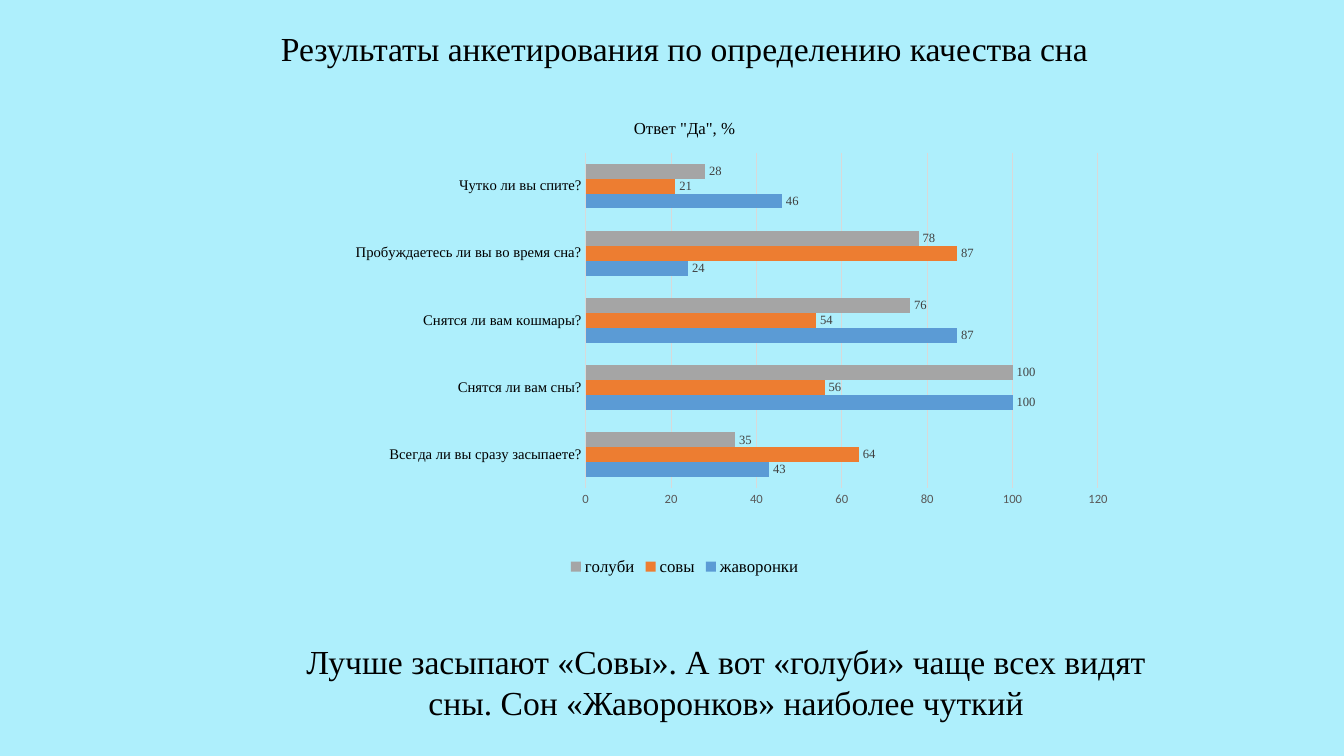
from lxml import etree
from pptx import Presentation, util as u
from pptx.chart.data import CategoryChartData
from pptx.dml.color import RGBColor
from pptx.enum import chart as ch, text
from pptx.oxml.ns import qn

PX = 9525  # EMU in one px, 96 px to the inch
SERIF, SANS = "Times New Roman", "Calibri"
COLORS = {
    "background": "AEEFFC", "text": "000000", "axis": "595959",
    "value": "404040", "grid": "D9D9D9",
    "жаворонки": "5B9BD5", "совы": "ED7D31", "голуби": "A5A5A5",
}
QUESTIONS = [
    "Всегда ли вы сразу засыпаете?", "Снятся ли вам сны?",
    "Снятся ли вам кошмары?", "Пробуждаетесь ли вы во время сна?",
    "Чутко ли вы спите?",
]
YES_ANSWERS = {
    "жаворонки": [43, 100, 87, 24, 46],
    "совы": [64, 56, 54, 87, 21],
    "голуби": [35, 100, 76, 78, 28],
}


def color(name):
    return RGBColor.from_string(COLORS[name])


def emu(box):
    return [length * PX for length in box]


def set_font(font, size, name=SERIF, ink="text"):
    font.size, font.name, font.bold = u.Pt(size), name, False
    font.color.rgb = color(ink)


def write(frame, words, wrap):
    frame.word_wrap = wrap
    frame.auto_size = text.MSO_AUTO_SIZE.SHAPE_TO_FIT_TEXT
    frame.vertical_anchor = text.MSO_ANCHOR.TOP
    line = frame.paragraphs[0]
    line.text = words
    line.alignment = text.PP_ALIGN.CENTER
    set_font(line.font, 24)


def add_heading(slide, box):
    heading = slide.shapes.title
    heading.left, heading.top, heading.width, heading.height = emu(box)
    write(heading.text_frame, "Результаты анкетирования по определению качества сна", False)


def add_conclusion(slide, box):
    conclusion = slide.shapes.add_textbox(*emu(box))
    write(conclusion.text_frame,
          "Лучше засыпают «Совы». А вот «голуби» чаще всех видят сны. "
          "Сон «Жаворонков» наиболее чуткий", True)


def set_plot_area(chart, x, y, w, h):
    """Fix the inner plot area, in fractions of the chart."""
    plot_area = chart._chartSpace.chart.plotArea
    for old in plot_area.findall(qn("c:layout")):
        plot_area.remove(old)
    layout = etree.Element(qn("c:layout"))
    manual = etree.SubElement(layout, qn("c:manualLayout"))
    settings = {"layoutTarget": "inner", "xMode": "edge", "yMode": "edge",
                "x": x, "y": y, "w": w, "h": h}
    for tag, value in settings.items():
        etree.SubElement(manual, qn(f"c:{tag}")).set("val", str(value))
    plot_area.insert(0, layout)


def add_survey_chart(slide, box):
    survey = CategoryChartData(number_format="General")
    survey.categories = QUESTIONS
    for group, answers in YES_ANSWERS.items():
        survey.add_series(group, answers)
    chart = slide.shapes.add_chart(
        ch.XL_CHART_TYPE.BAR_CLUSTERED, *emu(box), survey).chart
    set_font(chart.font, 10, SANS)
    set_plot_area(chart, 0.39, 0.11, 0.57, 0.7)

    # Chart title and legend
    chart.has_title = True
    caption = chart.chart_title.text_frame.paragraphs[0]
    caption.text = 'Ответ "Да", %'
    set_font(caption.font, 12)
    chart.chart_title.include_in_layout = False
    chart.has_legend = True
    chart.legend.position = ch.XL_LEGEND_POSITION.BOTTOM
    chart.legend.include_in_layout = False
    set_font(chart.legend.font, 12)

    # Axes
    questions, percent = chart.category_axis, chart.value_axis
    for axis in (questions, percent):
        axis.major_tick_mark = axis.minor_tick_mark = ch.XL_TICK_MARK.NONE
        axis.format.line.fill.background()
    set_font(questions.tick_labels.font, 10.5)
    set_font(percent.tick_labels.font, 9, SANS, "axis")
    percent.minimum_scale, percent.maximum_scale, percent.major_unit = 0, 120, 20
    percent.has_major_gridlines = True
    grid = percent.major_gridlines.format.line
    grid.color.rgb, grid.width = color("grid"), u.Pt(0.75)

    # Bars and their values
    bars = chart.plots[0]
    bars.gap_width, bars.overlap, bars.vary_by_categories = 150, 0, False
    for group in bars.series:
        group.format.fill.solid()
        group.format.fill.fore_color.rgb = color(group.name)
        labels = group.data_labels
        labels.show_value = True
        labels.position = ch.XL_LABEL_POSITION.OUTSIDE_END
        set_font(labels.font, 9, SERIF, "value")


def main():
    deck = Presentation()
    deck.slide_width, deck.slide_height = 1280 * PX, 720 * PX
    slide = deck.slides.add_slide(deck.slide_layouts[5])
    slide.background.fill.solid()
    slide.background.fill.fore_color.rgb = color("background")
    add_heading(slide, (254, 22, 796, 48))
    add_survey_chart(slide, (224, 95, 856, 457))
    add_conclusion(slide, (270, 606, 843, 87))
    deck.save("out.pptx")


if __name__ == "__main__":
    main()
